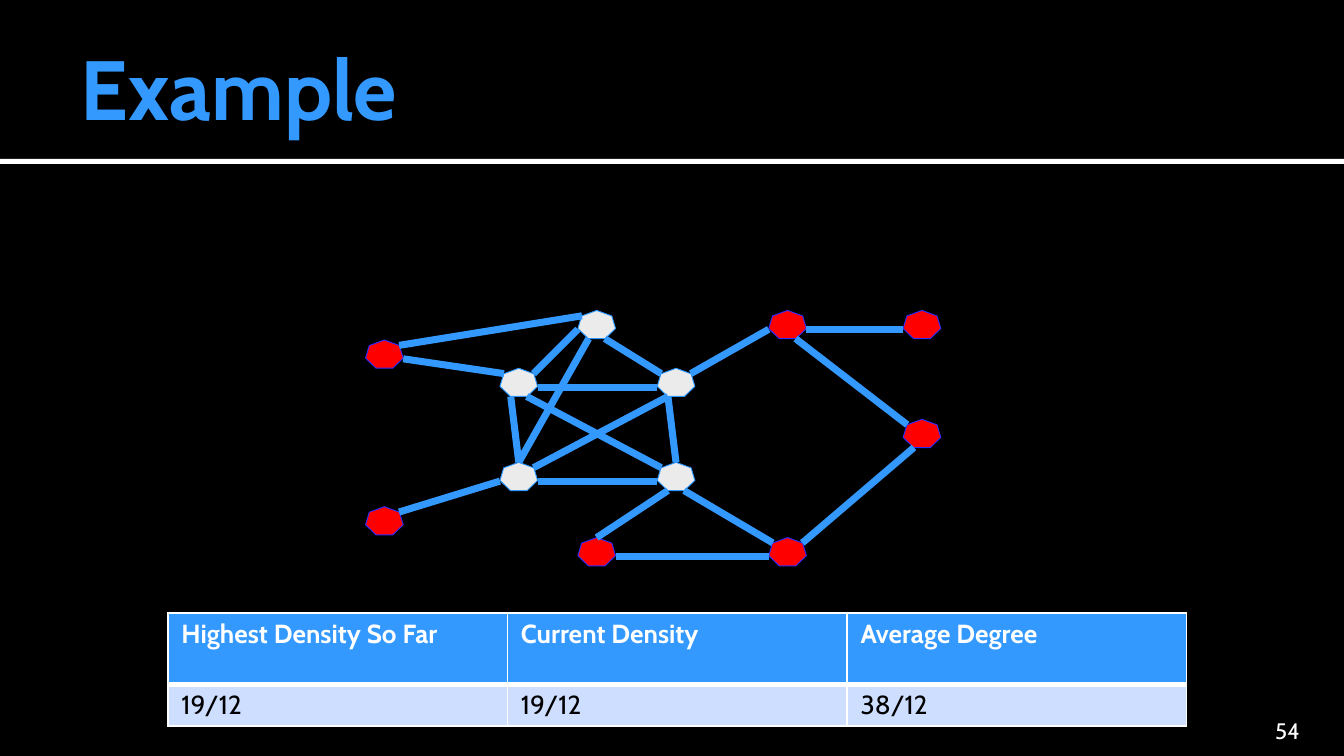
"""Builds a slide with a density example graph and its table of values."""
from lxml.etree import SubElement
from pptx import Presentation
from pptx.dml.color import RGBColor
from pptx.enum.shapes import MSO_CONNECTOR, MSO_SHAPE
from pptx.enum.text import MSO_ANCHOR, PP_ALIGN
from pptx.oxml.ns import qn
from pptx.util import Inches, Pt

FONT = "Cabin"
BLUE, WHITE, BLACK = "3399FF", "FFFFFF", "000000"
BANDS = [((0, 1.18, 10, 0.04), WHITE), ((0, 0, 10, 1.18), BLACK)]
NODE_SIZE = (0.28, 0.21)
NODE_STYLES = {"core": ("EBEBEB", "2D96FE"), "removed": ("FF0000", "2D2DFE")}
NODES = {
    "core northwest": (3.72, 2.74, "core"),
    "core southwest": (3.72, 3.44, "core"),
    "core southeast": (4.89, 3.44, "core"),
    "core northeast": (4.89, 2.74, "core"),
    "core top": (4.3, 2.31, "core"),
    "bottom": (4.3, 4, "removed"),
    "bottom right": (5.72, 4, "removed"),
    "far right": (6.72, 3.12, "removed"),
    "top right": (5.72, 2.31, "removed"),
    "far top right": (6.72, 2.31, "removed"),
    "left top": (2.72, 2.53, "removed"),
    "left bottom": (2.72, 3.77, "removed"),
}
CORNERS = {
    "top": (0.14, 0), "upper right": (0.25, 0.04), "right": (0.28, 0.14),
    "lower right": (0.2, 0.21), "lower left": (0.08, 0.21),
    "left": (0, 0.14), "upper left": (0.03, 0.04),
}
EDGES = [
    ("core northwest", "right", "core northeast", "left"),
    ("core northwest", "lower left", "core southwest", "top"),
    ("core southwest", "upper right", "core northeast", "lower left"),
    ("core northwest", "lower right", "core southeast", "upper left"),
    ("core northeast", "lower left", "core southeast", "top"),
    ("core southwest", "right", "core southeast", "left"),
    ("core northwest", "upper left", "left top", "right"),
    ("core southwest", "left", "left bottom", "upper right"),
    ("core northeast", "upper right", "top right", "left"),
    ("core southeast", "lower left", "bottom", "top"),
    ("core southeast", "lower right", "bottom right", "upper left"),
    ("bottom", "right", "bottom right", "left"),
    ("bottom right", "upper right", "far right", "lower left"),
    ("far right", "upper left", "top right", "lower right"),
    ("top right", "right", "far top right", "left"),
    ("core top", "left", "core northwest", "upper right"),
    ("core top", "lower left", "core southwest", "top"),
    ("core top", "lower right", "core northeast", "upper left"),
    ("core top", "upper left", "left top", "upper right"),
]
ROWS = [
    ("Highest Density So Far", "Current Density", "Average Degree"),
    ("19/12", "19/12", "38/12"),
]
ROW_HEIGHTS = (0.53, 0.3)
ROW_STYLES = [(BLUE, WHITE, True, (1, 3)), ("CEDEFF", BLACK, False, (3, 1))]


def color(value):
    return RGBColor.from_string(value)


def paint(fill, value):
    fill.solid()
    fill.fore_color.rgb = color(value)


def write(frame, text, size, tint, bold=False, align=PP_ALIGN.LEFT, **layout):
    for name, value in layout.items():
        setattr(frame, name, value)
    para = frame.paragraphs[0]
    para.alignment = align
    span = para.add_run()
    span.text = text
    for name, value in {"name": FONT, "size": Pt(size), "bold": bold}.items():
        setattr(span.font, name, value)
    span.font.color.rgb = color(tint)


def add_shape(page, kind, place, fill, line=None):
    shape = page.shapes.add_shape(kind, *map(Inches, place))
    shape.shadow.inherit = False
    paint(shape.fill, fill)
    if line:
        shape.line.color.rgb = color(line)
        shape.line.width = Pt(0.5)
    else:
        shape.line.fill.background()


def corner_point(node, corner):
    return [Inches(a + b) for a, b in zip(NODES[node], CORNERS[corner])]


def add_edge(page, start, start_corner, end, end_corner):
    edge = page.shapes.add_connector(
        MSO_CONNECTOR.STRAIGHT,
        *corner_point(start, start_corner), *corner_point(end, end_corner))
    edge.line.color.rgb = color(BLUE)
    edge.line.width = Pt(3.78)
    SubElement(edge._element.spPr, qn("a:effectLst"))


def add_borders(cell, widths):
    properties = cell._tc.get_or_add_tcPr()
    for side, width in zip(("L", "R", "T", "B"), widths):
        border = SubElement(properties, qn(f"a:ln{side}"), w=str(Pt(width)))
        fill = SubElement(border, qn("a:solidFill"))
        SubElement(fill, qn("a:srgbClr"), val=WHITE)


def add_density_table(page):
    table = page.shapes.add_table(
        len(ROWS), len(ROWS[0]), Inches(1.25), Inches(4.56),
        Inches(7.58), Inches(sum(ROW_HEIGHTS))).table
    for index, (texts, height, style) in enumerate(zip(ROWS, ROW_HEIGHTS, ROW_STYLES)):
        fill, tint, bold, borders = style
        table.rows[index].height = Inches(height)
        for cell, text in zip(table.rows[index].cells, texts):
            add_borders(cell, (1, 1, *borders))
            paint(cell.fill, fill)
            cell.margin_top = cell.margin_bottom = Inches(0.04)
            write(cell.text_frame, text, 14, tint, bold)


def main():
    deck = Presentation()
    deck.slide_width, deck.slide_height = Inches(10), Inches(10) * 9 // 16
    page = deck.slides.add_slide(deck.slide_layouts[5])
    paint(page.background.fill, BLACK)
    title = page.shapes.title
    for place, fill in BANDS:
        add_shape(page, MSO_SHAPE.RECTANGLE, place, fill)
    page.shapes._spTree.append(title._element)
    title.left, title.top, title.width, title.height = map(Inches, (0.5, 0.13, 9, 1.03))
    write(title.text_frame, "Example", 45, BLUE, True,
          vertical_anchor=MSO_ANCHOR.MIDDLE, margin_right=Inches(0.05))
    number = page.shapes.add_textbox(*map(Inches, (8.97, 5.31, 0.8, 0.23)))
    write(number.text_frame, "54", 12, WHITE, align=PP_ALIGN.RIGHT,
          word_wrap=True, vertical_anchor=MSO_ANCHOR.BOTTOM, margin_bottom=0)
    for left, top, role in NODES.values():
        add_shape(page, MSO_SHAPE.HEPTAGON, (left, top, *NODE_SIZE), *NODE_STYLES[role])
    for edge in EDGES:
        add_edge(page, *edge)
    add_density_table(page)
    deck.save("out.pptx")


if __name__ == "__main__":
    main()
